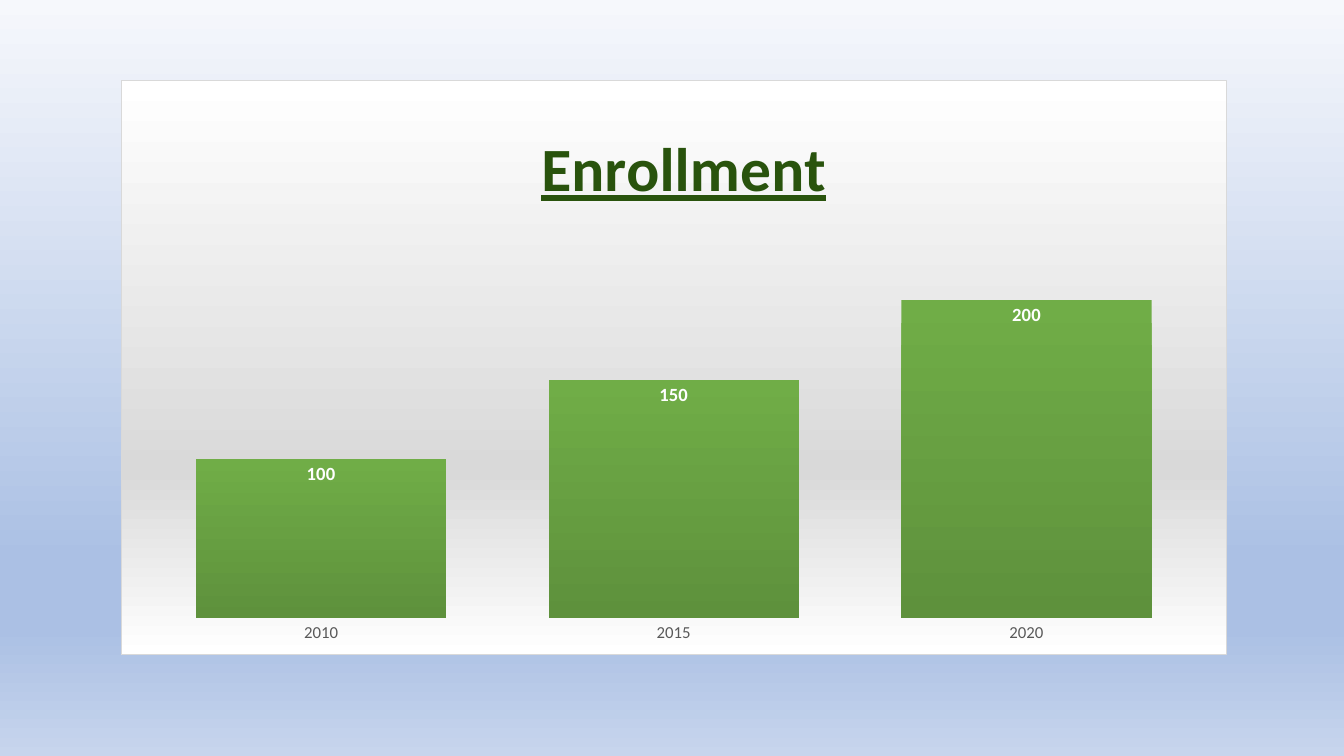
from pptx import Presentation
from pptx import oxml
from pptx import util as u
from pptx.chart import data as chart_data
from pptx.dml import color, fill as dml_fill, line as dml_line
from pptx.enum import chart as ch
from pptx.oxml import ns


def rgb(value):
    return color.RGBColor.from_string(value)


class Deck:
    """Holds the style and the current slide."""

    font = "Calibri"
    grey, border, white, title_green = "595959", "D9D9D9", "FFFFFF", "29530D"
    bar_stops = [(0, "70AD47"), (100, "5E913C")]
    panel_stops = [(0, "FFFFFF"), (68, "D9D9D9"), (100, "FFFFFF")]
    page_stops = [(0, "F6F8FC"), (74, "ABC0E4"), (83, "ABC0E4"), (100, "C7D5ED")]

    def __init__(self):
        self.prs = Presentation()
        self.prs.slide_width, self.prs.slide_height = u.Pt(960), u.Pt(540)
        self.s = self.prs.slides.add_slide(self.prs.slide_layouts[6])

    def gradient(self, fill, parent, stops):
        fill.solid()
        gs = "".join(
            f'<a:gs pos="{pos * 1000}"><a:srgbClr val="{c}"/></a:gs>' for pos, c in stops
        )
        grad = oxml.parse_xml(
            f'<a:gradFill {ns.nsdecls("a")} rotWithShape="1"><a:gsLst>{gs}</a:gsLst>'
            '<a:lin ang="5400000" scaled="0"/></a:gradFill>'
        )
        solid = parent.xpath(".//a:solidFill")[0]
        solid.getparent().replace(solid, grad)

    def background(self):
        self.gradient(self.s.background.fill, self.s.element, self.page_stops)

    def style(self, font, size, hex_color, bold=False):
        font.name, font.size, font.bold = self.font, u.Pt(size), bold
        font.color.rgb = rgb(hex_color)

    def layout(self, parent, index, inner=False, **place):
        for old in parent.xpath("c:layout"):
            parent.remove(old)
        target = '<c:layoutTarget val="inner"/>' if inner else ""
        modes = '<c:xMode val="edge"/><c:yMode val="edge"/>'
        sizes = "".join(f'<c:{k} val="{v}"/>' for k, v in place.items())
        parent.insert(index, oxml.parse_xml(
            f'<c:layout {ns.nsdecls("c")}><c:manualLayout>{target}{modes}{sizes}'
            "</c:manualLayout></c:layout>"
        ))

    def panel(self, chart):
        sp_pr = oxml.parse_xml(f'<c:spPr {ns.nsdecls("c")}/>')
        chart.element.xpath("c:txPr")[0].addprevious(sp_pr)
        fill = dml_fill.FillFormat.from_fill_parent(sp_pr)
        self.gradient(fill, sp_pr, self.panel_stops)
        ln = dml_line.LineFormat(sp_pr)
        ln.width = u.Pt(0.75)
        ln.fill.solid()
        ln.fill.fore_color.rgb = rgb(self.border)

    def title(self, chart, value):
        tf = chart.chart_title.text_frame
        tf.text = value
        r = tf.paragraphs[0].runs[0]
        self.style(r.font, 44, self.title_green, True)
        r.font.underline = True
        chart.chart_title.include_in_layout = False
        self.layout(chart.element.xpath("c:chart/c:title")[0], 1, x=0.37, y=0.06)

    def axes(self, chart):
        value = chart.value_axis
        value.visible = value.has_major_gridlines = False
        value.minimum_scale, value.maximum_scale = 0, 250
        cat = chart.category_axis
        cat.major_tick_mark = ch.XL_TICK_MARK.NONE
        cat.format.line.fill.background()
        self.style(cat.tick_labels.font, 12, self.grey)

    def bars(self, plot):
        plot.gap_width, plot.vary_by_categories = 41, False
        ser = plot.series[0]
        ser.invert_if_negative = False
        self.gradient(ser.format.fill, ser.format.fill and plot.series[0].format.line
                      and chart_sp_pr(plot), self.bar_stops)
        labels = ser.data_labels
        labels.show_value = True
        labels.position = ch.XL_LABEL_POSITION.INSIDE_END
        self.style(labels.font, 13.3, self.white, True)

    def column_chart(self, title, cats, values, x, y, w, h):
        data = chart_data.CategoryChartData()
        data.categories = cats
        data.add_series("Series 1", values)
        frame = self.s.shapes.add_chart(
            ch.XL_CHART_TYPE.COLUMN_CLUSTERED, u.Pt(x), u.Pt(y), u.Pt(w), u.Pt(h), data
        )
        chart = frame.chart
        chart.has_legend = False
        self.style(chart.font, 10, "000000")
        self.panel(chart)
        self.title(chart, title)
        self.axes(chart)
        self.bars(chart.plots[0])
        area = chart.element.xpath("c:chart/c:plotArea")[0]
        self.layout(area, 0, inner=True, x=0.021, y=0.244, w=0.958, h=0.693)


def chart_sp_pr(plot):
    return plot.series[0].format.fill and plot.series[0]._element.get_or_add_spPr()


def main():
    deck = Deck()
    deck.background()
    deck.column_chart("Enrollment", ["2010", "2015", "2020"], [100, 150, 200],
                      86.4, 56.9, 789.8, 411.1)
    deck.prs.save("out.pptx")


if __name__ == "__main__":
    main()
